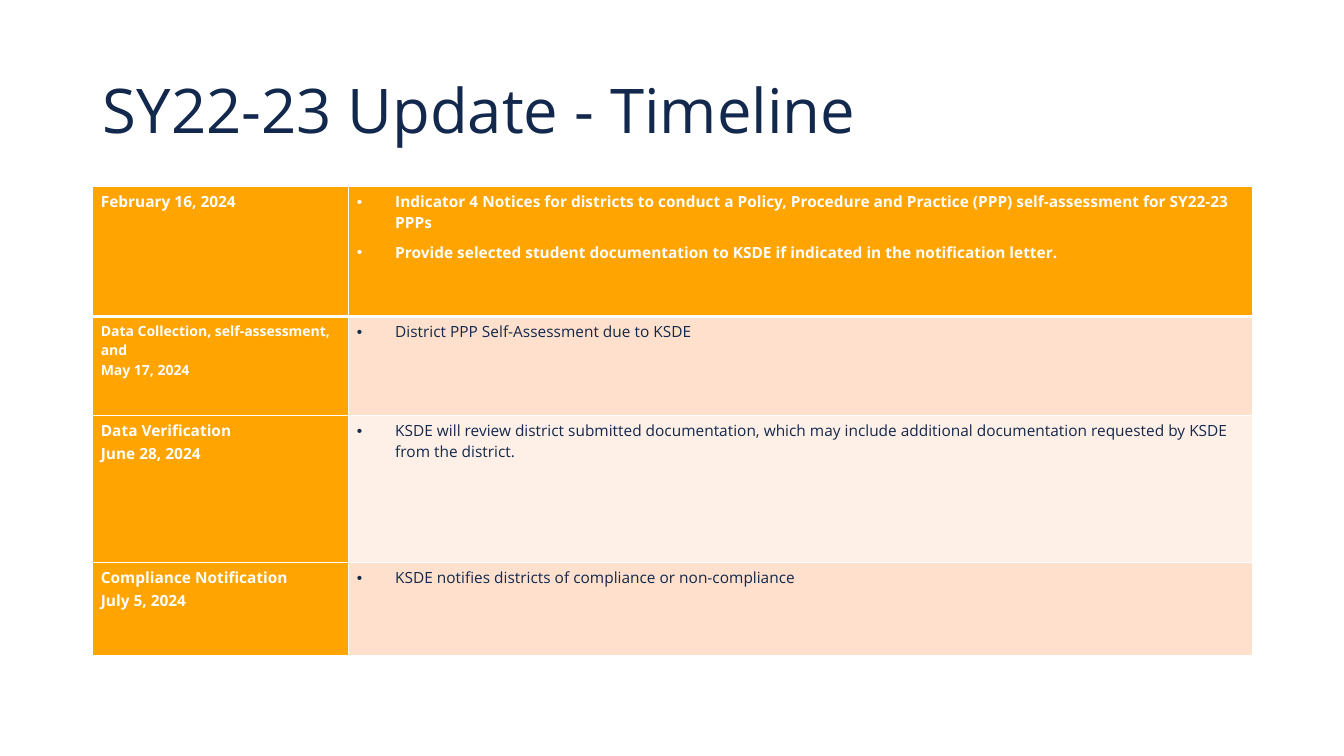
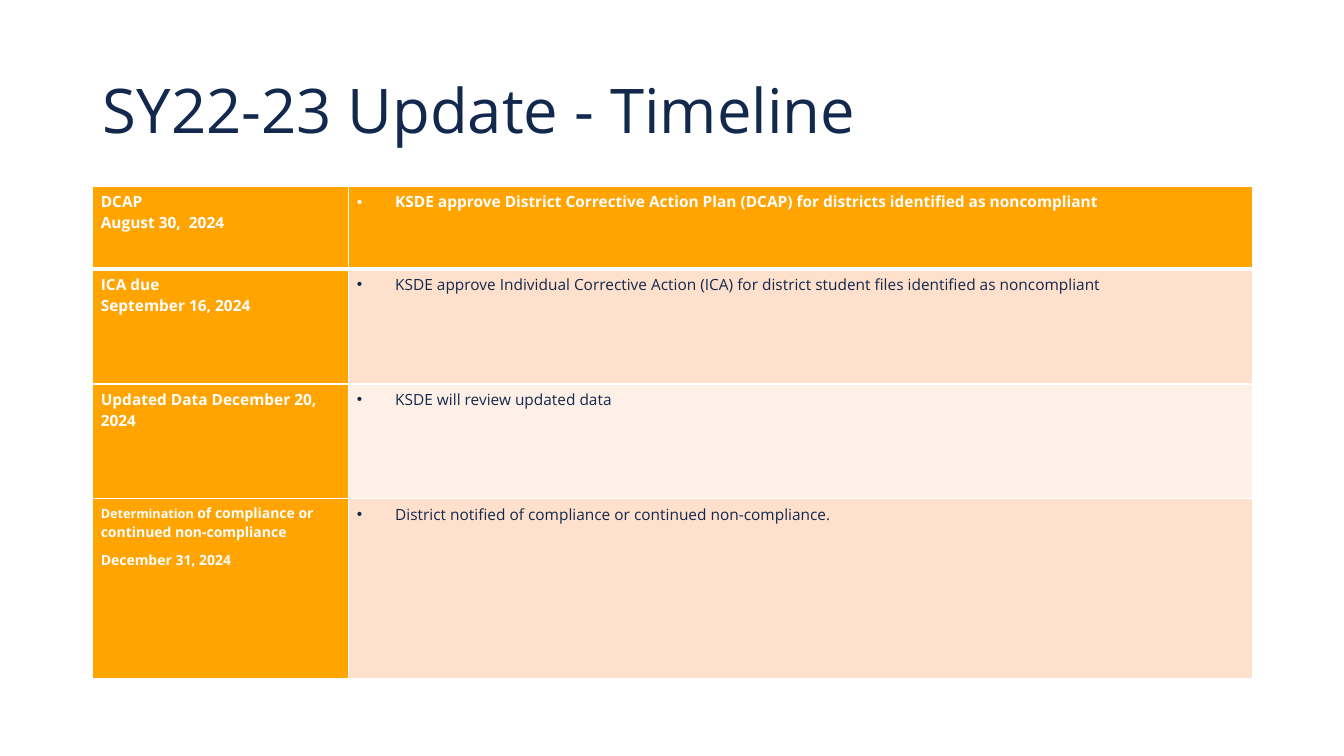
from dataclasses import dataclass

from lxml.etree import SubElement
from pptx import Presentation
from pptx.dml.color import RGBColor
from pptx.enum.text import MSO_ANCHOR, PP_ALIGN
from pptx.oxml.ns import qn
from pptx.util import Inches, Pt

COLORS = {
    "navy": "12284C",
    "orange": "FFA400",
    "peach": "FFE0CC",
    "cream": "FFF0E7",
    "white": "FFFFFF",
}
FONT = "Open Sans"
TITLE = "SY22-23 Update - Timeline"
LEFT, WIDTH = 0.92, 11.5
TITLE_TOP, TITLE_HEIGHT = 0.4, 1.45
COLUMN_WIDTHS = (2.54, 8.96)
BULLET_INDENT = 0.38
THIN, THICK = 1, 3


@dataclass
class Entry:
    """One paragraph of a cell, with an optional smaller lead-in."""

    text: str
    size: float = 11
    after: float = 0
    line: float = 1.0
    lead: str = ""
    lead_size: float = 9


@dataclass
class Step:
    """One row of the timeline: its height, milestone and actions."""

    height: float
    milestone: list
    actions: list


NOTICE_STEPS = [
    Step(1.29, [Entry("February 16, 2024", after=6)], [
        Entry("Indicator 4 Notices for districts to conduct a Policy, Procedure and Practice (PPP) "
              "self-assessment for SY22-23 PPPs", after=6),
        Entry("Provide selected student documentation to KSDE if indicated in the notification letter."),
    ]),
    Step(0.98, [
        Entry("Data Collection, self-assessment, and", size=10),
        Entry("May 17, 2024", size=10, line=1.07),
    ], [Entry("District PPP Self-Assessment due to KSDE")]),
    Step(1.46, [Entry("Data Verification"), Entry("June 28, 2024", line=1.07)], [
        Entry("KSDE will review district submitted documentation, which may include additional "
              "documentation requested by KSDE from the district."),
    ]),
    Step(0.92, [Entry("Compliance Notification"), Entry("July 5, 2024", line=1.07)],
         [Entry("KSDE notifies districts of compliance or non-compliance", after=6)]),
]

CORRECTION_STEPS = [
    Step(0.82, [Entry("DCAP"), Entry("August 30,  2024")], [
        Entry("KSDE approve District Corrective Action Plan (DCAP) for districts identified as noncompliant"),
    ]),
    Step(1.14, [Entry("ICA due"), Entry("September 16, 2024")], [
        Entry("KSDE approve Individual Corrective Action (ICA) for district student files "
              "identified as noncompliant"),
    ]),
    Step(1.14, [Entry("Updated Data December 20, 2024", after=6)],
         [Entry("KSDE will review updated data", after=6)]),
    Step(1.78, [
        Entry(" of compliance or continued non-compliance", size=10, after=6, lead="Determination"),
        Entry("December 31, 2024", size=10, after=6),
    ], [Entry("District notified of compliance or continued non-compliance.", after=6)]),
]


def color(name):
    """Return the named colour of the palette."""
    return RGBColor.from_string(COLORS[name])


def style_font(font, size, color_name, bold=False):
    """Apply the deck's typeface with a size, colour and weight."""
    font.name = FONT
    font.size = Pt(size)
    font.bold = bold
    font.color.rgb = color(color_name)


def add_bullet(para):
    """Give a paragraph a round bullet with a hanging indent."""
    properties = para._p.get_or_add_pPr()
    properties.set("marL", str(Inches(BULLET_INDENT)))
    properties.set("indent", str(-Inches(BULLET_INDENT)))
    SubElement(properties, qn("a:buFont"), typeface="Arial")
    SubElement(properties, qn("a:buChar"), char="•")


def add_border(cell, side, points):
    """Draw a white border on one side of a cell."""
    properties = cell._tc.get_or_add_tcPr()
    line = SubElement(properties, qn(f"a:ln{side}"), w=str(Pt(points)))
    fill = SubElement(line, qn("a:solidFill"))
    SubElement(fill, qn("a:srgbClr"), val=COLORS["white"])


def write_entries(cell, entries, color_name, bold, bulleted):
    """Write the paragraphs of a cell."""
    frame = cell.text_frame
    for index, entry in enumerate(entries):
        para = frame.add_paragraph() if index else frame.paragraphs[0]
        if bulleted:
            add_bullet(para)
        style_font(para.font, entry.size, color_name, bold)
        para.space_after = Pt(entry.after)
        para.line_spacing = entry.line
        if entry.lead:
            span = para.add_run()
            span.text = entry.lead
            span.font.size = Pt(entry.lead_size)
        para.add_run().text = entry.text


def format_cell(cell, fill_name, row_index):
    """Set the margins, borders and fill of a cell."""
    cell.margin_left = cell.margin_right = Inches(0.08)
    cell.margin_top = cell.margin_bottom = Inches(0.05)
    add_border(cell, "L", THIN)
    add_border(cell, "R", THIN)
    add_border(cell, "T", THICK if row_index == 1 else THIN)
    add_border(cell, "B", THICK if row_index == 0 else THIN)
    cell.fill.solid()
    cell.fill.fore_color.rgb = color(fill_name)


def add_title(page):
    """Place and format the title placeholder."""
    title = page.shapes.title
    title.left, title.top = Inches(LEFT), Inches(TITLE_TOP)
    title.width, title.height = Inches(WIDTH), Inches(TITLE_HEIGHT)
    frame = title.text_frame
    frame.text = TITLE
    frame.vertical_anchor = MSO_ANCHOR.MIDDLE
    para = frame.paragraphs[0]
    para.alignment = PP_ALIGN.LEFT
    para.line_spacing = 0.9
    style_font(para.font, 44, "navy")


def add_timeline(page, steps):
    """Add a table with one row per step, milestones on the left."""
    height = sum(step.height for step in steps)
    table = page.shapes.add_table(
        len(steps), len(COLUMN_WIDTHS), Inches(LEFT), Inches(TITLE_TOP + TITLE_HEIGHT),
        Inches(WIDTH), Inches(height)).table
    table.horz_banding = False
    for column, width in zip(table.columns, COLUMN_WIDTHS):
        column.width = Inches(width)
    for row_index, step in enumerate(steps):
        table.rows[row_index].height = Inches(step.height)
        for column_index, entries in enumerate((step.milestone, step.actions)):
            cell = table.cell(row_index, column_index)
            strong = row_index == 0 or column_index == 0
            band = "peach" if row_index % 2 else "cream"
            format_cell(cell, "orange" if strong else band, row_index)
            write_entries(cell, entries, "white" if strong else "navy", strong, column_index == 1)


def main():
    """Build the timeline deck."""
    deck = Presentation()
    deck.slide_width, deck.slide_height = Inches(13.33), Inches(7.5)
    for steps in (NOTICE_STEPS, CORRECTION_STEPS):
        page = deck.slides.add_slide(deck.slide_layouts[5])
        add_title(page)
        add_timeline(page, steps)
    deck.save("out.pptx")


if __name__ == "__main__":
    main()
